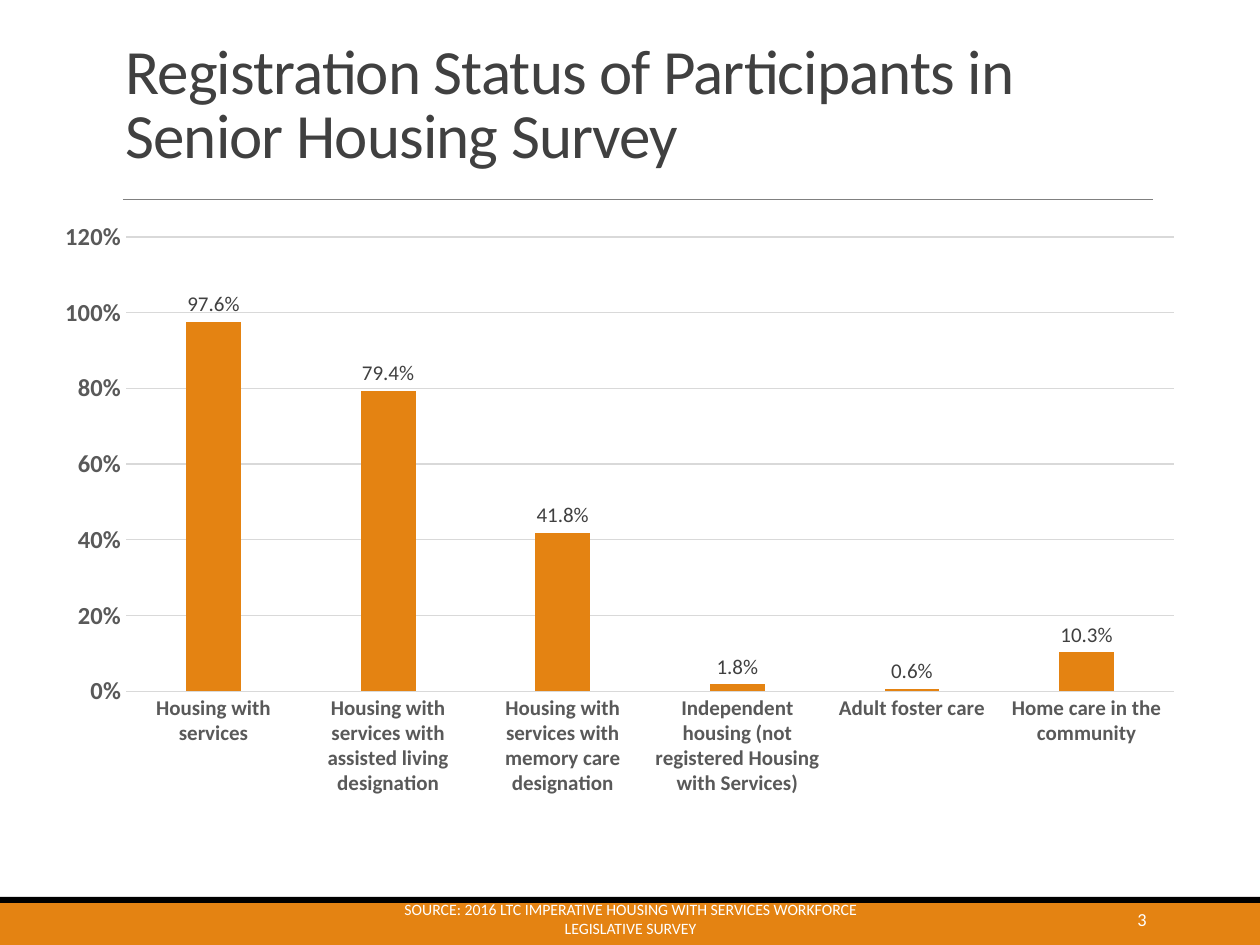
from pptx import Presentation
from pptx.chart.data import CategoryChartData
from pptx.dml.color import RGBColor
from pptx.enum.chart import XL_CHART_TYPE, XL_LABEL_POSITION, XL_TICK_MARK
from pptx.enum.shapes import MSO_CONNECTOR, MSO_SHAPE
from pptx.enum.text import MSO_ANCHOR, PP_ALIGN
from pptx.oxml.ns import qn
from pptx.util import Pt
from lxml.etree import SubElement

# Content
TITLE = "Registration Status of Participants in Senior Housing Survey"
SOURCE = "SOURCE: 2016 LTC IMPERATIVE HOUSING WITH SERVICES WORKFORCE LEGISLATIVE SURVEY"
PAGE = "3"
DATA = [
    ("Housing with services", 0.976),
    ("Housing with services with assisted living designation", 0.794),
    ("Housing with services with memory care designation", 0.418),
    ("Independent housing (not registered Housing with Services)", 0.018),
    ("Adult foster care", 0.006),
    ("Home care in the community", 0.103),
]

THEME = {
    "font": "Calibri",
    "color": {"accent": "E48312", "band": "000000", "rule": "808080", "grid": "D9D9D9",
              "text": "404040", "axis": "595959", "light": "FFFFFF"},
    "size": {"title": 36, "value": 14, "label": 12, "page": 10.5, "source": 9},
}

# Places in px: left, top, width, height
WIDE, HIGH, FOOT = 1260, 945, 898
TITLE_BOX = (113, 39, 1040, 139)
CHART_BOX = (42, 210, 1155, 598)
PAGE_BOX = (1023, FOOT, 136, 42)
SOURCE_BOX = (381, FOOT, 499, 42)
BARS = [((0, FOOT, WIDE, HIGH - FOOT), "accent"), ((0, 897, WIDE, 6), "band")]
RULE = (123, 199, 1153, 199)


def px(*nums):
    return [round(n * 914400 / 126) for n in nums]


def color(name):
    return RGBColor.from_string(THEME["color"][name])


def style(font, size, tone, bold=False):
    form = {"name": THEME["font"], "size": Pt(THEME["size"][size]), "bold": bold}
    for key, val in form.items():
        setattr(font, key, val)
    font.color.rgb = color(tone)


def stroke(line, tone, width):
    line.color.rgb = color(tone)
    line.width = Pt(width)


def add_text(slide, box, text, size, tone, align, anchor):
    frame = slide.shapes.add_textbox(*px(*box)).text_frame
    frame.word_wrap = True
    frame.vertical_anchor = anchor
    para = frame.paragraphs[0]
    para.alignment = align
    run = para.add_run()
    run.text = text
    style(run.font, size, tone)
    return para


def add_bars(slide):
    for box, tone in BARS:
        bar = slide.shapes.add_shape(MSO_SHAPE.RECTANGLE, *px(*box))
        bar.shadow.inherit = False
        bar.fill.solid()
        bar.fill.fore_color.rgb = color(tone)
        bar.line.fill.background()
    rule = slide.shapes.add_connector(MSO_CONNECTOR.STRAIGHT, *px(*RULE))
    stroke(rule.line, "rule", 0.5)
    SubElement(rule._element.spPr, qn("a:effectLst"))


def add_graph(slide):
    data = CategoryChartData(number_format="0.0%")
    data.categories = [name for name, _ in DATA]
    data.add_series("Series 1", [val for _, val in DATA])
    chart = slide.shapes.add_chart(XL_CHART_TYPE.COLUMN_CLUSTERED, *px(*CHART_BOX), data).chart
    chart.has_legend = chart.has_title = False
    style(chart.font, "label", "text")

    # Axes
    cat, val = chart.category_axis, chart.value_axis
    for axis, size in ((cat, "label"), (val, "value")):
        axis.major_tick_mark = axis.minor_tick_mark = XL_TICK_MARK.NONE
        style(axis.tick_labels.font, size, "axis", True)
    stroke(cat.format.line, "grid", 0.75)
    val.format.line.fill.background()
    val.has_major_gridlines = True
    stroke(val.major_gridlines.format.line, "grid", 0.75)
    for key, num in {"minimum_scale": 0, "maximum_scale": 1.2, "major_unit": 0.2}.items():
        setattr(val, key, num)
    val.tick_labels.number_format = "0%"
    val.tick_labels.number_format_is_linked = False

    # Columns and their labels
    plot = chart.plots[0]
    form = {"gap_width": 219, "overlap": -27, "vary_by_categories": False,
            "has_data_labels": True}
    for key, item in form.items():
        setattr(plot, key, item)
    fill = plot.series[0].format.fill
    fill.solid()
    fill.fore_color.rgb = color("accent")
    form = {"show_value": True, "number_format": "0.0%", "number_format_is_linked": False,
            "position": XL_LABEL_POSITION.OUTSIDE_END}
    for key, item in form.items():
        setattr(plot.data_labels, key, item)
    style(plot.data_labels.font, "label", "text")


def main():
    deck = Presentation()
    deck.slide_width, deck.slide_height = px(WIDE, HIGH)
    slide = deck.slides.add_slide(deck.slide_layouts[6])
    add_bars(slide)
    title = add_text(slide, TITLE_BOX, TITLE, "title", "text", PP_ALIGN.LEFT, MSO_ANCHOR.BOTTOM)
    title.line_spacing = 0.85
    title.runs[0].font._element.set("spc", "-50")
    add_graph(slide)
    add_text(slide, PAGE_BOX, PAGE, "page", "light", PP_ALIGN.RIGHT, MSO_ANCHOR.MIDDLE)
    add_text(slide, SOURCE_BOX, SOURCE, "source", "light", PP_ALIGN.CENTER, MSO_ANCHOR.MIDDLE)
    deck.save("out.pptx")


if __name__ == "__main__":
    main()
